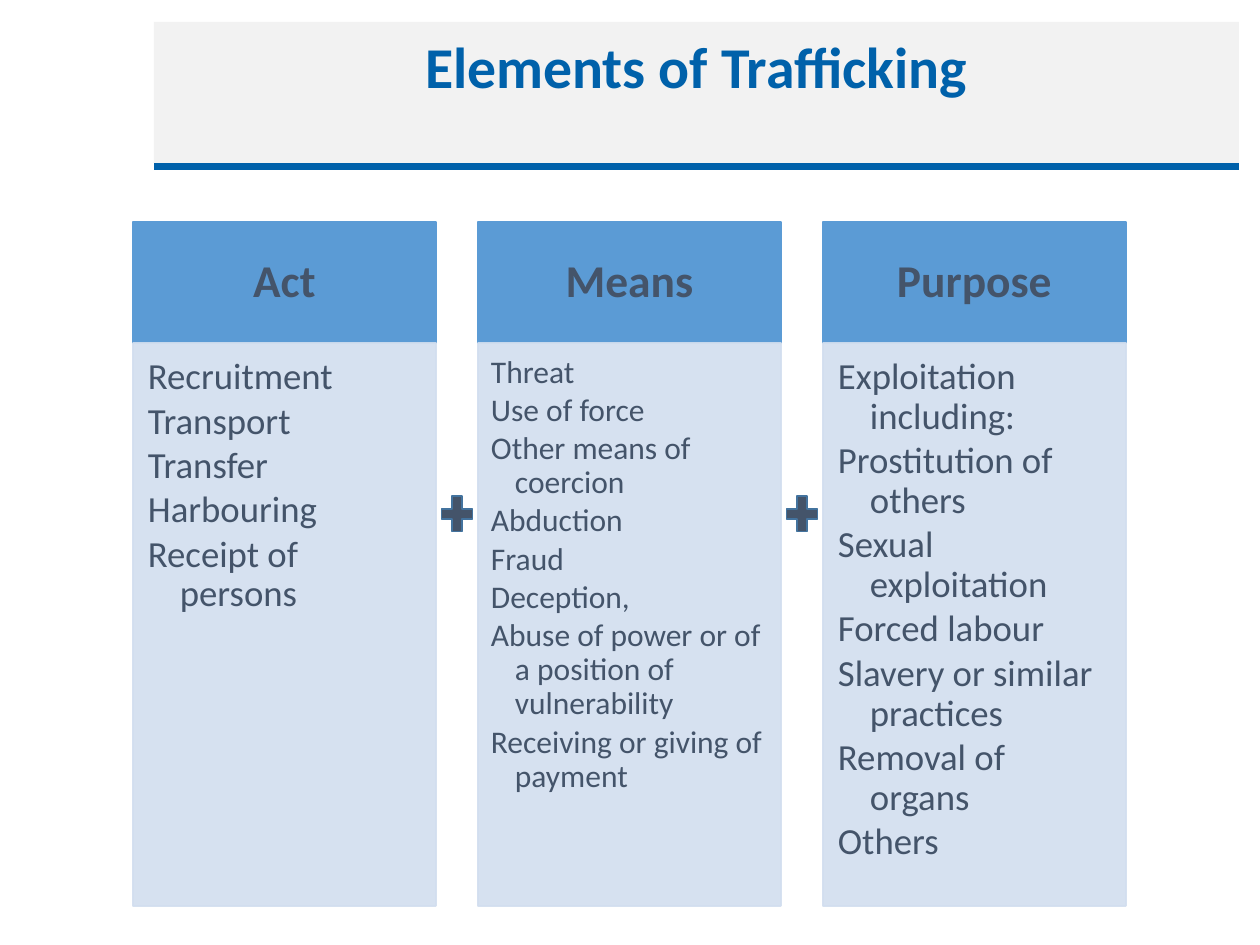
"""Build the slide on the three elements of trafficking."""
from lxml.etree import SubElement
from pptx import Presentation
from pptx.dml.color import RGBColor
from pptx.enum.shapes import MSO_CONNECTOR, MSO_SHAPE
from pptx.enum.text import MSO_ANCHOR, PP_ALIGN
from pptx.oxml.ns import qn
from pptx.util import Pt

BLUE = RGBColor(0x00, 0x61, 0xAA)
GREY = RGBColor(0xF2, 0xF2, 0xF2)
HEADER = RGBColor(0x5B, 0x9B, 0xD5)
PANEL = RGBColor(0xD2, 0xDE, 0xEF)
SLATE = RGBColor(0x44, 0x54, 0x6A)
PLUS_EDGE = RGBColor(0x43, 0x73, 0x9E)

TITLE = "Elements of Trafficking"
LARGE = {"size": 21, "after": 2.7, "hang": 32, "insets": (15, 15, 20, 23)}
SMALL = {"size": 18, "after": 2.4, "hang": 24, "insets": (13, 13, 18, 20)}
COLUMNS = [
    ("Act", LARGE, ["Recruitment", "Transport", "Transfer", "Harbouring", "Receipt of persons"]),
    ("Means", SMALL, [
        "Threat", "Use of force", "Other means of coercion", "Abduction", "Fraud", "Deception,",
        "Abuse of power or of a position of vulnerability", "Receiving or giving of payment"]),
    ("Purpose", LARGE, [
        "Exploitation including:", "Prostitution of others", "Sexual exploitation", "Forced labour",
        "Slavery or similar practices", "Removal of organs", "Others"]),
]

LEFT, TOP, WIDTH, PITCH = 133, 222, 303, 345
HEAD_HEIGHT, BODY_HEIGHT = 121, 563
PLUS_TOP, PLUS_WIDTH, PLUS_HEIGHT = 490, 42, 48


def px(length):
    return round(length * 914400 / 126)


def add_box(page, kind, place, fill, edge=None):
    box = page.shapes.add_shape(kind, *map(px, place))
    box.shadow.inherit = False
    box.fill.solid()
    box.fill.fore_color.rgb = fill
    if edge is None:
        box.line.fill.background()
    else:
        box.line.color.rgb = edge
        box.line.width = Pt(1)
    return box


def write(box, lines, insets, anchor, font, layout, hang=0):
    frame = box.text_frame
    frame.word_wrap = True
    frame.vertical_anchor = anchor
    for side, inset in zip(("left", "top", "right", "bottom"), insets):
        setattr(frame, f"margin_{side}", px(inset))
    for index, line in enumerate(lines):
        para = frame.add_paragraph() if index else frame.paragraphs[0]
        for name, value in layout.items():
            setattr(para, name, value)
        if hang:
            properties = para._p.get_or_add_pPr()
            properties.set("marL", str(px(hang)))
            properties.set("indent", str(-px(hang)))
        span = para.add_run()
        span.text = line
        span.font.color.rgb = font["color"]
        for name in ("name", "size", "bold"):
            setattr(span.font, name, font[name])


def make_font(size, color, bold=False):
    return {"name": "Calibri", "size": Pt(size), "color": color, "bold": bold}


def add_title(page):
    rule = page.shapes.add_connector(MSO_CONNECTOR.STRAIGHT, *map(px, (154, 166, 1239, 166)))
    rule.line.color.rgb = BLUE
    rule.line.width = Pt(4.5)
    SubElement(rule._element.spPr, qn("a:effectLst"))
    box = add_box(page, MSO_SHAPE.RECTANGLE, (154, 22, 1085, 141), GREY)
    write(box, [TITLE], (25, 25, 25, 6), MSO_ANCHOR.TOP, make_font(33, BLUE, True),
          {"alignment": PP_ALIGN.CENTER, "line_spacing": 0.75})


def add_column(page, left, heading, style, items):
    head = add_box(page, MSO_SHAPE.RECTANGLE, (left, TOP, WIDTH, HEAD_HEIGHT), HEADER, HEADER)
    write(head, [heading], (25, 15, 25, 15), MSO_ANCHOR.MIDDLE, make_font(26, SLATE, True),
          {"alignment": PP_ALIGN.CENTER, "line_spacing": 0.9})
    place = (left, TOP + HEAD_HEIGHT, WIDTH, BODY_HEIGHT)
    body = add_box(page, MSO_SHAPE.RECTANGLE, place, PANEL, PANEL)
    for color in body._element.spPr.iter(qn("a:srgbClr")):
        SubElement(color, qn("a:alpha")).set("val", "90000")
    layout = {"level": 1, "alignment": PP_ALIGN.LEFT, "line_spacing": 0.9,
              "space_after": Pt(style["after"])}
    write(body, items, style["insets"], MSO_ANCHOR.TOP, make_font(style["size"], SLATE),
          layout, style["hang"])


def main():
    deck = Presentation()
    deck.slide_width, deck.slide_height = px(1260), px(945)
    page = deck.slides.add_slide(deck.slide_layouts[6])
    add_title(page)
    for index, column in enumerate(COLUMNS):
        add_column(page, LEFT + index * PITCH, *column)
    for index in range(1, len(COLUMNS)):
        left = LEFT + index * PITCH - PLUS_WIDTH
        add_box(page, MSO_SHAPE.MATH_PLUS, (left, PLUS_TOP, PLUS_WIDTH, PLUS_HEIGHT),
                SLATE, PLUS_EDGE)
    deck.save("out.pptx")


if __name__ == "__main__":
    main()
